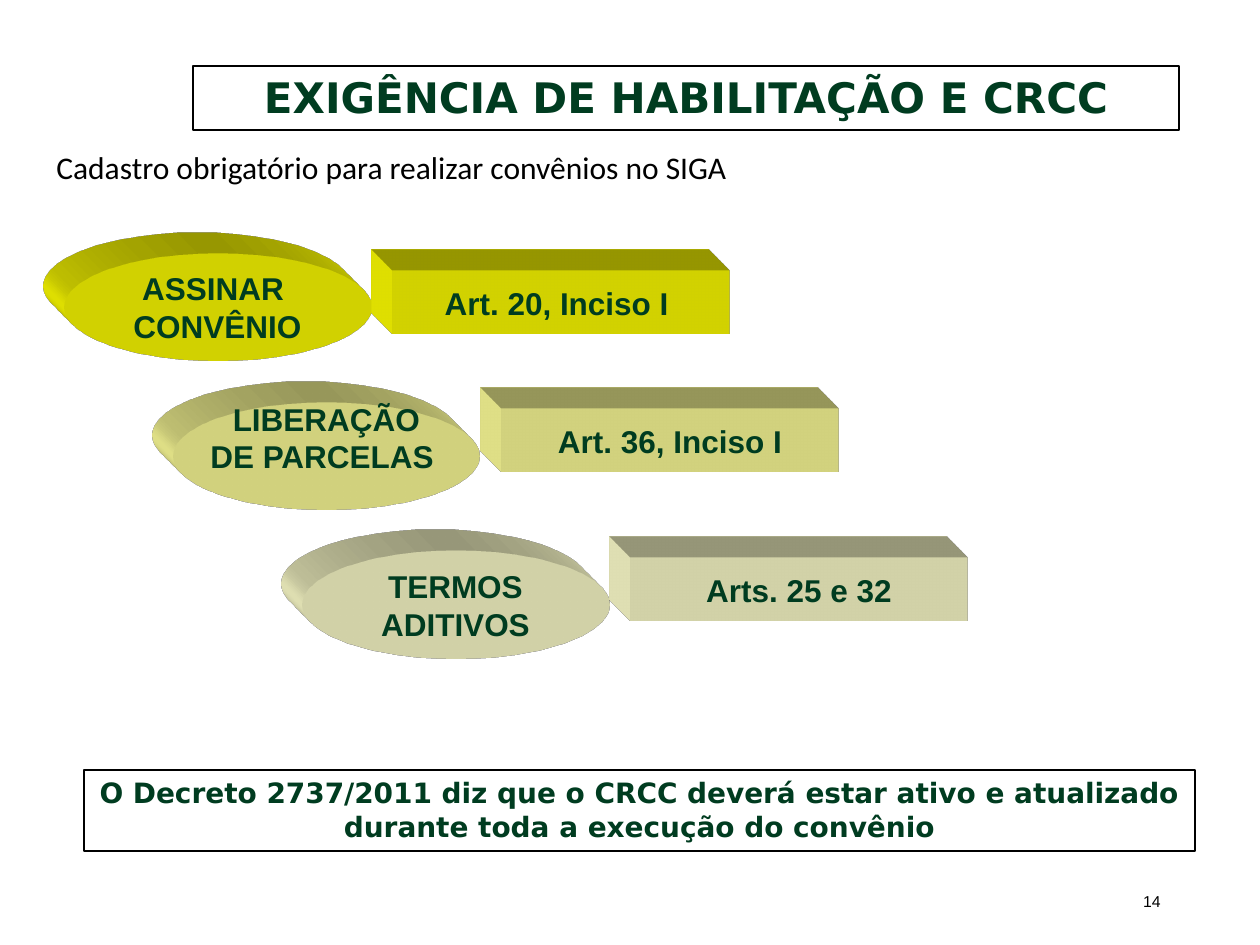
from lxml import etree
from pptx import Presentation
from pptx.dml.color import RGBColor
from pptx.enum import shapes, text
from pptx.oxml.ns import nsdecls
from pptx.util import Pt

PX = 914400 / 126
COLORS = {"green": "003C20", "black": "000000", "yellow": "FFFF00",
          "pale": "FFFF99", "cream": "FFFFCC"}


def write(box, words, font="Arial", size=18, color="green", bold=True,
          align="CENTER", anchor="MIDDLE", wrap=True, bottom=6):
    """Fill a shape with one paragraph per line of words."""
    frame = box.text_frame
    frame.text = words
    frame.word_wrap = wrap
    frame.auto_size = text.MSO_AUTO_SIZE.NONE
    frame.vertical_anchor = text.MSO_ANCHOR[anchor]
    frame.margin_top = round(6 * PX)
    frame.margin_bottom = round(bottom * PX)
    for para in frame.paragraphs:
        para.alignment = text.PP_ALIGN[align]
        for span in para.runs:
            span.font.name = font
            span.font.size = Pt(size)
            span.font.bold = bold
            span.font.color.rgb = RGBColor.from_string(COLORS[color])


def extrude(box, color):
    """Colour a shape and give it depth towards the top left."""
    box.shadow.inherit = False
    box.fill.solid()
    box.fill.fore_color.rgb = RGBColor.from_string(COLORS[color])
    box.line.fill.background()
    ns = nsdecls("a")
    for xml in (
        f'<a:scene3d {ns}><a:camera prst="legacyObliqueTopLeft"/>'
        '<a:lightRig rig="legacyFlat3" dir="b"/></a:scene3d>',
        f'<a:sp3d {ns} extrusionH="430200" prstMaterial="legacyMatte">'
        '<a:bevelT w="13500" h="13500" prst="angle"/>'
        '<a:bevelB w="13500" h="13500" prst="angle"/>'
        f'<a:extrusionClr><a:srgbClr val="{COLORS[color]}"/></a:extrusionClr></a:sp3d>',
    ):
        box._element.spPr.append(etree.fromstring(xml))


deck = Presentation()
deck.slide_width, deck.slide_height = round(1260 * PX), round(945 * PX)
page = deck.slides.add_slide(deck.slide_layouts[5])

# Framed title and closing note
title = page.shapes.title
title.left, title.top, title.width, title.height = [
    round(n * PX) for n in (193, 66, 986, 64)]
write(title, "EXIGÊNCIA DE HABILITAÇÃO E CRCC", font="DejaVu Sans", size=24, anchor="TOP")

note = page.shapes.add_shape(shapes.MSO_SHAPE.RECTANGLE,
                             *[round(n * PX) for n in (84, 770, 1111, 81)])
note.shadow.inherit = False
write(note, "O Decreto 2737/2011 diz que o CRCC deverá estar ativo e atualizado "
      "durante toda a execução do convênio", font="DejaVu Sans", size=16, anchor="TOP")

for framed in (title, note):
    framed.fill.background()
    framed.line.color.rgb = RGBColor.from_string(COLORS["black"])
    framed.line.width = Pt(1)

# Subtitle and page number
subtitle = page.shapes.add_textbox(*[round(n * PX) for n in (44, 142, 1032, 89)])
write(subtitle, "Cadastro obrigatório para realizar convênios no SIGA", font="Calibri",
      color="black", bold=False, align="LEFT", anchor="TOP")
number = page.shapes.add_textbox(*[round(n * PX) for n in (890, 876, 283, 50)])
write(number, "14", size=9, color="black", bold=False, align="RIGHT")

# Each stage: an ellipse, and to its right a bar with the article
stages = [
    ("ASSINAR \nCONVÊNIO", "Art. 20, Inciso I ", "yellow", 64, 271, 6),
    ("LIBERAÇÃO\nDE PARCELAS ", "Art. 36, Inciso I", "pale", 173, 409, 43),
    ("TERMOS\nADITIVOS", "Arts. 25 e 32", "cream", 302, 558, 6),
]
for row, (stage, article, color, left, bar_top, bottom) in enumerate(stages):
    ellipse = page.shapes.add_shape(
        shapes.MSO_SHAPE.OVAL,
        *[round(n * PX) for n in (left, 253 + 149 * row, 307, 108)])
    extrude(ellipse, color)
    write(ellipse, stage, wrap=False, bottom=bottom)

    bar = page.shapes.add_shape(
        shapes.MSO_SHAPE.RECTANGLE,
        *[round(n * PX) for n in (left + 328, bar_top, 338, 63)])
    extrude(bar, color)
    write(bar, article, wrap=False)

deck.save("out.pptx")
